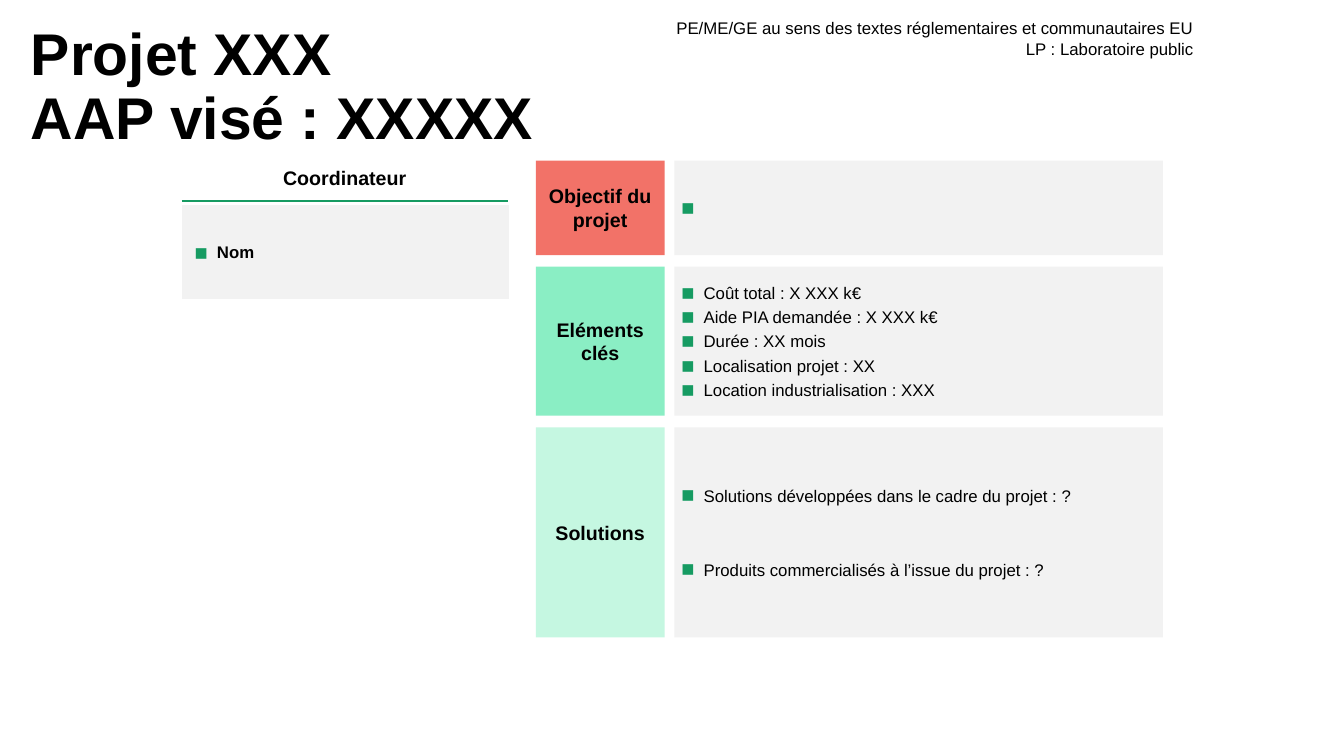
from lxml import etree
from pptx import Presentation
from pptx.dml.color import RGBColor
from pptx.enum.shapes import MSO_CONNECTOR, MSO_SHAPE
from pptx.enum.text import MSO_ANCHOR, PP_ALIGN
from pptx.oxml.ns import qn
from pptx.util import Pt

RECT, LINE = MSO_SHAPE.RECTANGLE, MSO_CONNECTOR.STRAIGHT
TOP, MIDDLE, BOTTOM = MSO_ANCHOR.TOP, MSO_ANCHOR.MIDDLE, MSO_ANCHOR.BOTTOM
LEFT, CENTER, RIGHT = PP_ALIGN.LEFT, PP_ALIGN.CENTER, PP_ALIGN.RIGHT
COLORS = {
    "text": "000000", "white": "FFFFFF", "green": "169B62", "panel": "F2F2F2",
    "goal": "F27268", "key": "8AEEC4", "solutions": "C5F7E1",
}


def rgb(name):
    return RGBColor.from_string(COLORS[name])


def add_solid(parent, name):
    fill = etree.SubElement(parent, qn("a:solidFill"))
    etree.SubElement(fill, qn("a:srgbClr"), val=COLORS[name])


def add_bullet(p):
    pPr = p._p.get_or_add_pPr()
    pPr.set("marL", str(Pt(18)))
    pPr.set("indent", str(Pt(-16)))
    clr = etree.SubElement(pPr, qn("a:buClr"))
    etree.SubElement(clr, qn("a:srgbClr"), val=COLORS["green"])
    etree.SubElement(pPr, qn("a:buSzPct"), val="130000")
    etree.SubElement(pPr, qn("a:buFont"), typeface="Arial")
    etree.SubElement(pPr, qn("a:buChar"), char="■")


def write(tf, lines, size=12, bold=False, align=LEFT, bullet=False, gap=0,
          spacing=None):
    """Fill a text frame with one paragraph per line; gap separates them."""
    for i, line in enumerate(lines):
        p = tf.add_paragraph() if i else tf.paragraphs[0]
        p.text = line
        p.alignment = align
        if bullet:
            add_bullet(p)
            p.space_after = Pt(3)
        if i and gap:
            p.space_before = Pt(gap)
        if spacing:
            p.line_spacing = spacing
        for r in p.runs:
            r.font.name, r.font.size, r.font.bold = "Arial", Pt(size), bold
            r.font.color.rgb = rgb("text")


class Board:
    def __init__(self, slide):
        self.slide = slide

    def text(self, x, y, w, h, lines, anchor=TOP, wrap=True, **style):
        s = self.slide.shapes.add_textbox(Pt(x), Pt(y), Pt(w), Pt(h))
        s.text_frame.word_wrap = wrap
        s.text_frame.vertical_anchor = anchor
        write(s.text_frame, lines, **style)

    def box(self, x, y, w, h, fill, lines=(), anchor=MIDDLE, inset=0, **style):
        s = self.slide.shapes.add_shape(RECT, Pt(x), Pt(y), Pt(w), Pt(h))
        s.shadow.inherit = False
        s.fill.solid()
        s.fill.fore_color.rgb = rgb(fill)
        s.line.fill.background()
        tf = s.text_frame
        tf.word_wrap = True
        tf.vertical_anchor = anchor
        tf.margin_left = tf.margin_right = Pt(inset)
        tf.margin_top = tf.margin_bottom = Pt(inset)
        write(tf, lines, **style)

    def rule(self, x1, x2, y, color, width):
        c = self.slide.shapes.add_connector(LINE, Pt(x1), Pt(y), Pt(x2), Pt(y))
        c.line.color.rgb = rgb(color)
        c.line.width = Pt(width)
        etree.SubElement(c._element.spPr, qn("a:effectLst"))

    def table(self, x, y, w, h, lines, **style):
        """One-cell table with a white lower border."""
        t = self.slide.shapes.add_table(1, 1, Pt(x), Pt(y), Pt(w), Pt(h)).table
        t.first_row = t.horz_banding = False
        cell = t.cell(0, 0)
        cell.vertical_anchor = MIDDLE
        border = etree.SubElement(cell._tc.get_or_add_tcPr(), qn("a:lnB"),
                                  w=str(Pt(3)))
        add_solid(border, "white")
        cell.fill.solid()
        cell.fill.fore_color.rgb = rgb("panel")
        write(cell.text_frame, lines, **style)


def main():
    prs = Presentation()
    prs.slide_width, prs.slide_height = Pt(960), Pt(540)
    board = Board(prs.slides.add_slide(prs.slide_layouts[6]))

    board.box(129, 111, 234.5, 31.5, "white", ["Coordinateur"], anchor=BOTTOM,
              inset=7.2, size=14, bold=True, align=CENTER)
    board.rule(130, 363, 143.6, "green", 1.5)
    board.text(15, 11, 897, 104, ["Projet XXX\vAAP visé : XXXXX"],
               anchor=MIDDLE, size=42, bold=True, spacing=0.9)

    sections = [
        (67.5, "goal", "Objectif du projet", [" "], 0),
        (106.5, "key", "Eléments\vclés",
         ["Coût total : X XXX k€", "Aide PIA demandée : X XXX k€",
          "Durée : XX mois", "Localisation projet : XX",
          "Location industrialisation : XXX"], 0),
        (150, "solutions", "Solutions",
         ["Solutions développées dans le cadre du projet : ?",
          "Produits commercialisés à l’issue du projet : ?"], 35.5),
    ]
    y = 114.75
    for h, color, label, items, gap in sections:
        board.box(382.75, y, 92, h, color, [label], size=14, bold=True,
                  align=CENTER)
        board.box(481.75, y, 349, h, "panel", items, inset=2.9, bullet=True,
                  gap=gap)
        y += h + 8.25

    board.table(129.75, 146, 234, 69, ["Nom"], bold=True, bullet=True)
    board.text(472.3, 9.4, 387.4, 36,
               ["PE/ME/GE au sens des textes réglementaires et communautaires EU",
                "LP : Laboratoire public"], wrap=False, align=RIGHT)
    prs.save("out.pptx")


if __name__ == "__main__":
    main()
